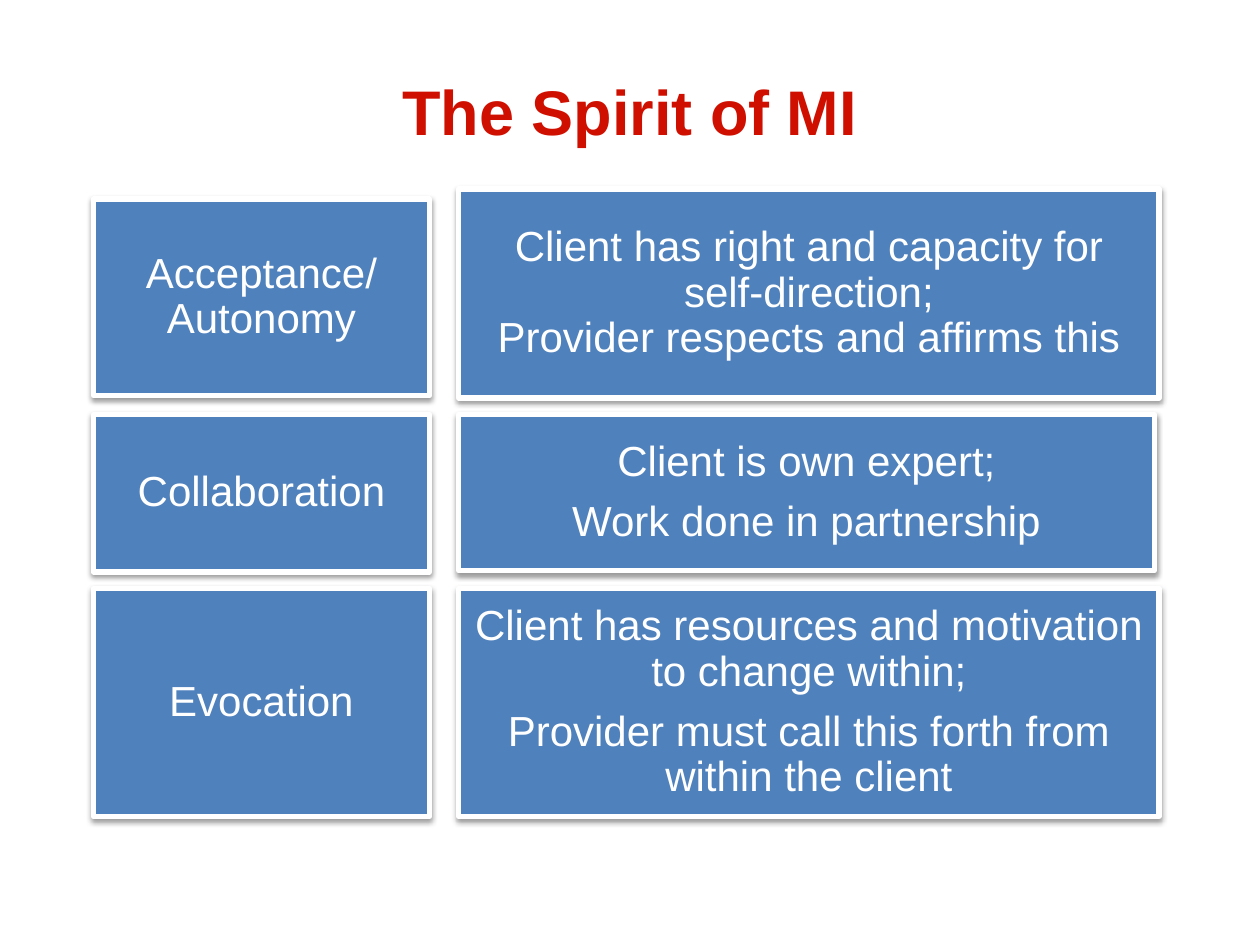
from lxml.etree import SubElement
from pptx import Presentation
from pptx.dml.color import RGBColor
from pptx.enum.shapes import MSO_SHAPE as Shape
from pptx.enum.text import MSO_ANCHOR as Anchor, PP_ALIGN as Align
from pptx.oxml.ns import qn
from pptx.util import Inches, Pt

COLUMNS, ROWS = 100, 75
LABEL_LEFT, LABEL_WIDTH = 7.4, 26.7
MEANING_LEFT = 36.4

# label, (top, height), meaning paragraphs, (top, width, height)
PRINCIPLES = [
    ("Collaboration", (32.9, 12.5),
     ["Client is own expert;", "Work done in partnership"],
     (32.9, 55.2, 12.4)),
    ("Evocation", (46.7, 18.1),
     ["Client has resources and motivation to change within;",
      "Provider must call this forth from within the client"],
     (46.7, 55.6, 18.1)),
    ("Acceptance/ Autonomy", (15.8, 15.6),
     ["Client has right and capacity for self-direction;\v"
      "Provider respects and affirms this"],
     (15, 55.6, 16.6)),
]


def rgb(value):
    return RGBColor.from_string(value)


def write(frame, paragraphs, size, color, bold=False, spacing=None, after=None):
    frame.word_wrap = True
    frame.vertical_anchor = Anchor.MIDDLE
    for index, text in enumerate(paragraphs):
        paragraph = frame.paragraphs[0] if index == 0 else frame.add_paragraph()
        paragraph.text = text
        paragraph.alignment = Align.CENTER
        paragraph.line_spacing = spacing
        paragraph.space_after = after
        for run in paragraph.runs:
            run.font.name = "Arial"
            run.font.size = Pt(size)
            run.font.bold = bold
            run.font.color.rgb = rgb(color)


def cast_shadow(shape):
    """Give the shape a soft black shadow straight below it."""
    shape.shadow.inherit = False
    effects = shape._element.spPr.find(qn("a:effectLst"))
    shadow = SubElement(effects, qn("a:outerShdw"), blurRad=str(Pt(3.1)),
                        dist=str(Pt(1.6)), dir="5400000", rotWithShape="0")
    black = SubElement(shadow, qn("a:srgbClr"), val="000000")
    SubElement(black, qn("a:alpha"), val="38000")


class Deck:
    title_color = "CF1001"
    box_color = "4F81BD"
    light = "FFFFFF"

    def __init__(self):
        self.deck = Presentation()
        self.deck.slide_width, self.deck.slide_height = Inches(10), Inches(7.5)
        self.slide = self.deck.slides.add_slide(self.deck.slide_layouts[5])

    def place(self, left, top, width, height):
        """Turn grid columns and rows into slide lengths."""
        column = self.deck.slide_width / COLUMNS
        row = self.deck.slide_height / ROWS
        return (round(left * column), round(top * row),
                round(width * column), round(height * row))

    def title(self, text, *area):
        title = self.slide.shapes.title
        title.left, title.top, title.width, title.height = self.place(*area)
        write(title.text_frame, [text], 36, self.title_color, bold=True)

    def box(self, paragraphs, *area):
        box = self.slide.shapes.add_shape(Shape.RECTANGLE, *self.place(*area))
        box.fill.solid()
        box.fill.fore_color.rgb = rgb(self.box_color)
        box.line.color.rgb = rgb(self.light)
        box.line.width = Pt(3)
        cast_shadow(box)
        frame = box.text_frame
        frame.margin_left = frame.margin_right = Inches(0.1)
        frame.margin_top = frame.margin_bottom = Inches(0.1)
        write(frame, paragraphs, 24, self.light, spacing=0.9, after=Pt(8.4))

    def save(self):
        self.deck.save("out.pptx")


def main():
    deck = Deck()
    deck.title("The Spirit of MI", 5, 2.5, 90, 12.5)
    for label, (label_top, label_height), meaning, (top, width, height) in PRINCIPLES:
        deck.box([label], LABEL_LEFT, label_top, LABEL_WIDTH, label_height)
        deck.box(meaning, MEANING_LEFT, top, width, height)
    deck.save()


if __name__ == "__main__":
    main()
